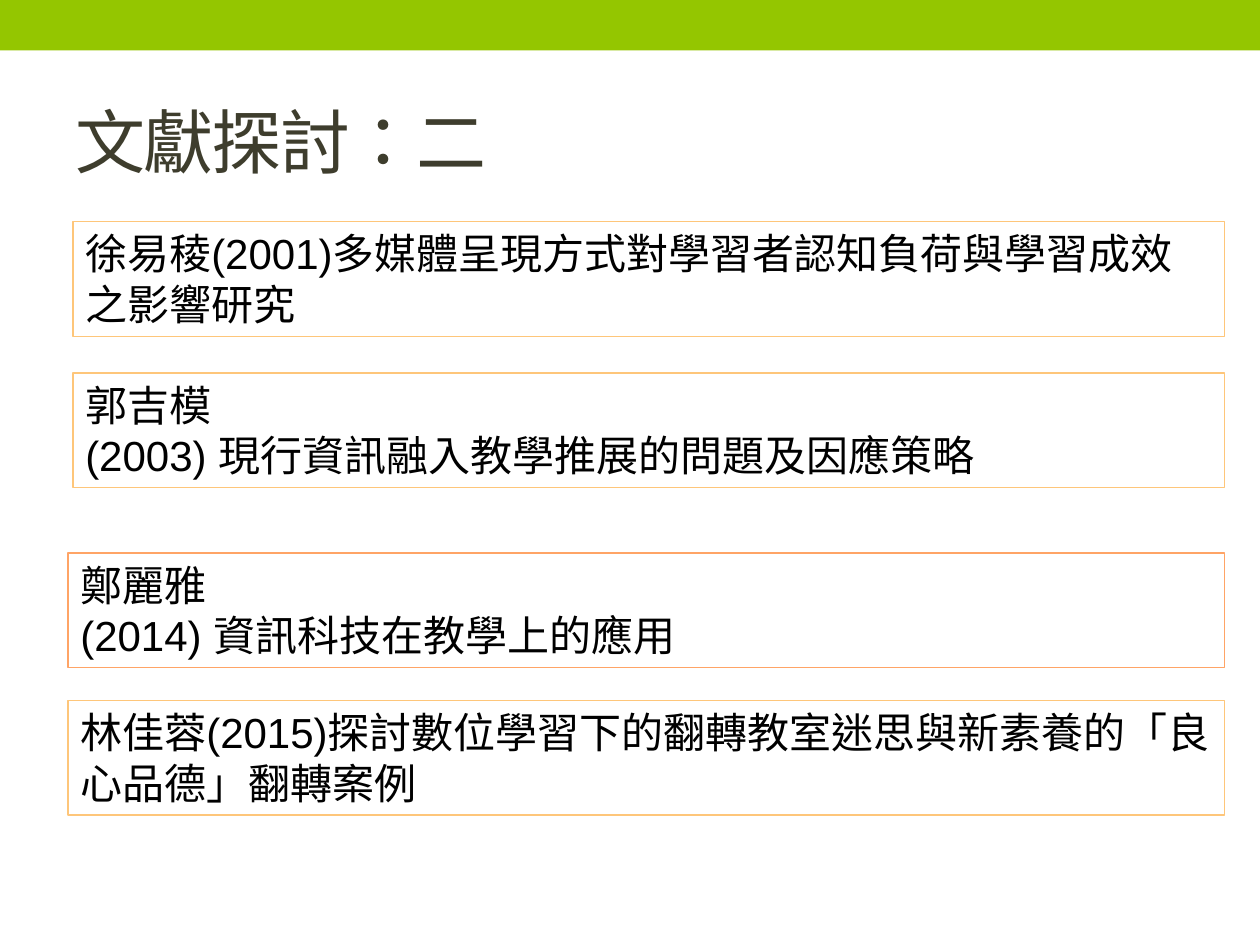
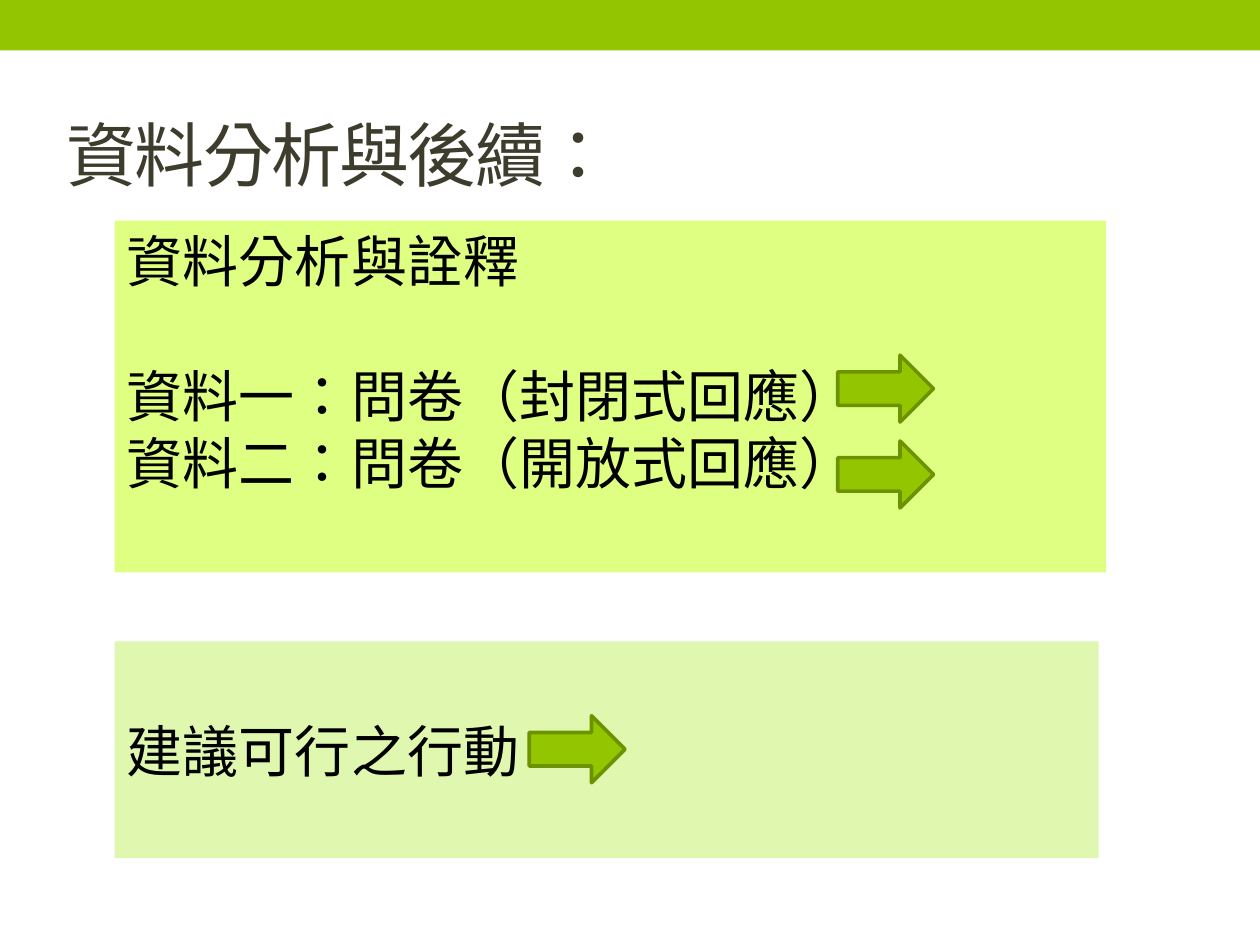
"""Builds two slides: a literature review list and the data analysis with its follow-up."""
from pptx import Presentation, util as u
from pptx.dml import color as c
from pptx.enum import shapes, text

FONT = "Arial"
GREEN, DARK_GREEN, LIME, PALE_GREEN = "94C600", "6D9200", "DFFF82", "DFF7AE"
YELLOW, ORANGE = "FEC67A", "FFA466"
TITLE_COLOR, BLACK = "3E3D2D", "000000"
RECTANGLE, ARROW = shapes.MSO_SHAPE.RECTANGLE, shapes.MSO_SHAPE.RIGHT_ARROW


def paint(target, color):
    target.rgb = c.RGBColor.from_string(color)


def write(shape, lines, size, color, anchor, spacing=0):
    frame = shape.text_frame
    frame.word_wrap = True
    frame.auto_size = text.MSO_AUTO_SIZE.NONE
    frame.vertical_anchor = anchor
    for index, line in enumerate(lines):
        paragraph = frame.paragraphs[0] if index == 0 else frame.add_paragraph()
        paragraph.alignment = text.PP_ALIGN.LEFT
        run = paragraph.add_run()
        run.text = line
        run.font.name = FONT
        run.font.size = u.Pt(size)
        paint(run.font.color, color)
        properties = run.font._element
        properties.set("lang", "zh-TW")
        properties.set("spc", str(spacing))


TOP, MIDDLE = text.MSO_ANCHOR.TOP, text.MSO_ANCHOR.MIDDLE

studies_right, study_height = 24.69, 2.31
studies = [
    (1.47, 4.47, YELLOW, ["徐易稜(2001)多媒體呈現方式對學習者認知負荷與學習成效之影響研究"]),
    (1.47, 7.52, YELLOW, ["郭吉模", "(2003) 現行資訊融入教學推展的問題及因應策略"]),
    (1.37, 11.15, ORANGE, ["鄭麗雅", "(2014) 資訊科技在教學上的應用"]),
    (1.37, 14.12, YELLOW, ["林佳蓉(2015)探討數位學習下的翻轉教室迷思與新素養的「良心品德」翻轉案例"]),
]
panels = [
    (4.45, 19.99, 7.09, LIME, TOP,
     ["資料分析與詮釋", "資料一：問卷（封閉式回應）", "資料二：問卷（開放式回應）"]),
    (12.93, 19.84, 4.37, PALE_GREEN, MIDDLE, ["建議可行之行動"]),
]
arrows = [(16.89, 7.16), (16.89, 8.89), (10.67, 14.43)]

presentation = Presentation()
presentation.slide_width, presentation.slide_height = u.Cm(25.4), u.Cm(19.05)

slides = []
for heading, left, top in [("文獻探討：二", 1.27, 1.47), ("資料分析與後續：", 1.09, 1.73)]:
    slide = presentation.slides.add_slide(presentation.slide_layouts[5])
    title = slide.shapes.title
    title.left, title.top, title.width, title.height = map(u.Cm, (left, top, 22.86, 2.74))
    write(title, [heading], 40, TITLE_COLOR, MIDDLE, spacing=-100)
    band = slide.shapes.add_shape(RECTANGLE, 0, 0, presentation.slide_width, u.Cm(1.02))
    band.shadow.inherit = False
    band.fill.solid()
    paint(band.fill.fore_color, GREEN)
    band.line.fill.background()
    slides.append(slide)
review_slide, analysis_slide = slides

for left, top, border, lines in studies:
    box = review_slide.shapes.add_shape(
        RECTANGLE, *map(u.Cm, (left, top, studies_right - left, study_height)))
    box.shadow.inherit = False
    box.fill.background()
    paint(box.line.color, border)
    box.line.width = u.Pt(0.75)
    write(box, lines, 24, BLACK, TOP)

for top, width, height, fill, anchor, lines in panels:
    panel = analysis_slide.shapes.add_shape(RECTANGLE, *map(u.Cm, (2.31, top, width, height)))
    panel.shadow.inherit = False
    panel.fill.solid()
    paint(panel.fill.fore_color, fill)
    panel.line.fill.background()
    write(panel, lines, 32, BLACK, anchor)
    if len(lines) > 1:
        panel.text_frame.paragraphs[1].space_before = u.Pt(38.5)

for left, top in arrows:
    arrow = analysis_slide.shapes.add_shape(ARROW, *map(u.Cm, (left, top, 1.93, 1.35)))
    arrow.shadow.inherit = False
    arrow.fill.solid()
    paint(arrow.fill.fore_color, GREEN)
    paint(arrow.line.color, DARK_GREEN)
    arrow.line.width = u.Pt(2.08)

presentation.save("out.pptx")
